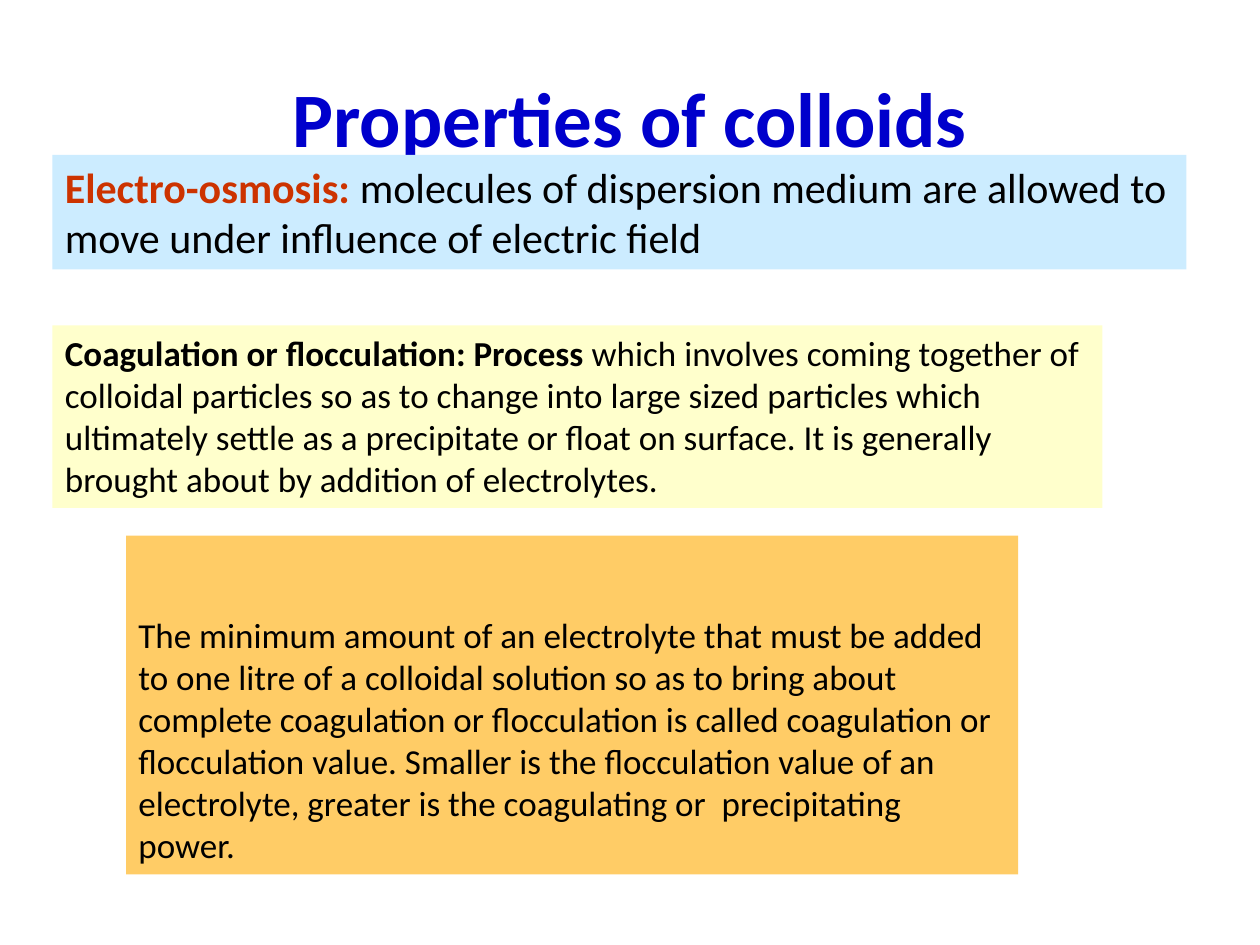
from pptx import Presentation
from pptx.dml.color import RGBColor
from pptx.enum import shapes, text
from pptx.util import Pt

COLORS = {
    "title": "0000CC",
    "term": "CC3300",
    "body": "000000",
    "osmosis": "CCECFF",
    "coagulation": "FFFFCC",
    "value": "FFCC66",
}


def add_text(paragraph, wording, size=20, color="body", bold=False):
    run = paragraph.add_run()
    run.text = wording
    run.font.name = "Calibri"
    run.font.size = Pt(size)
    run.font.bold = bold
    run.font.color.rgb = RGBColor.from_string(COLORS[color])


def set_title(slide, wording):
    title = slide.shapes.title
    title.left, title.top, title.width, title.height = map(Pt, (36, 21.6, 648, 90))
    title.text_frame.vertical_anchor = text.MSO_ANCHOR.MIDDLE
    heading = title.text_frame.paragraphs[0]
    heading.alignment = text.PP_ALIGN.CENTER
    add_text(heading, wording, size=44, color="title", bold=True)


def add_panel(slide, box, fill, anchor=text.MSO_ANCHOR.TOP, right=7.2, bottom=3.6):
    """Add a filled panel and return its empty left-aligned paragraph."""
    panel = slide.shapes.add_shape(shapes.MSO_SHAPE.RECTANGLE, *map(Pt, box))
    panel.shadow.inherit = False
    panel.fill.solid()
    panel.fill.fore_color.rgb = RGBColor.from_string(COLORS[fill])
    panel.line.fill.background()
    frame = panel.text_frame
    frame.word_wrap = True
    frame.vertical_anchor = anchor
    frame.margin_right, frame.margin_bottom = Pt(right), Pt(bottom)
    paragraph = frame.paragraphs[0]
    paragraph.alignment = text.PP_ALIGN.LEFT
    return paragraph


def main():
    deck = Presentation()
    deck.slide_width, deck.slide_height = Pt(720), Pt(540)
    slide = deck.slides.add_slide(deck.slide_layouts.get_by_name("Title Only"))
    set_title(slide, "Properties of colloids")

    osmosis = add_panel(slide, (30, 88.5, 648, 65.4), "osmosis")
    add_text(osmosis, "Electro-osmosis:", size=24, color="term", bold=True)
    add_text(osmosis, " molecules of dispersion medium are allowed to move under "
             "influence of electric field", size=24)

    coagulation = add_panel(slide, (30, 186, 600, 104.2), "coagulation")
    add_text(coagulation, "Coagulation or flocculation: Process ", bold=True)
    add_text(coagulation, "which involves coming together of colloidal particles so as "
             "to change into large sized particles which ultimately settle as a "
             "precipitate or float on surface. It is generally brought about by "
             "addition of electrolytes.")

    flocculation_value = add_panel(slide, (72, 306, 509.75, 193.7), "value",
                                   anchor=text.MSO_ANCHOR.BOTTOM, right=10, bottom=5.2)
    add_text(flocculation_value, "The minimum amount of an electrolyte that must be "
             "added to one litre of a colloidal solution so as to bring about complete "
             "coagulation or flocculation is called coagulation or flocculation value. "
             "Smaller is the flocculation value of an electrolyte, greater is the "
             "coagulating or  precipitating power.")

    deck.save("out.pptx")


if __name__ == "__main__":
    main()
